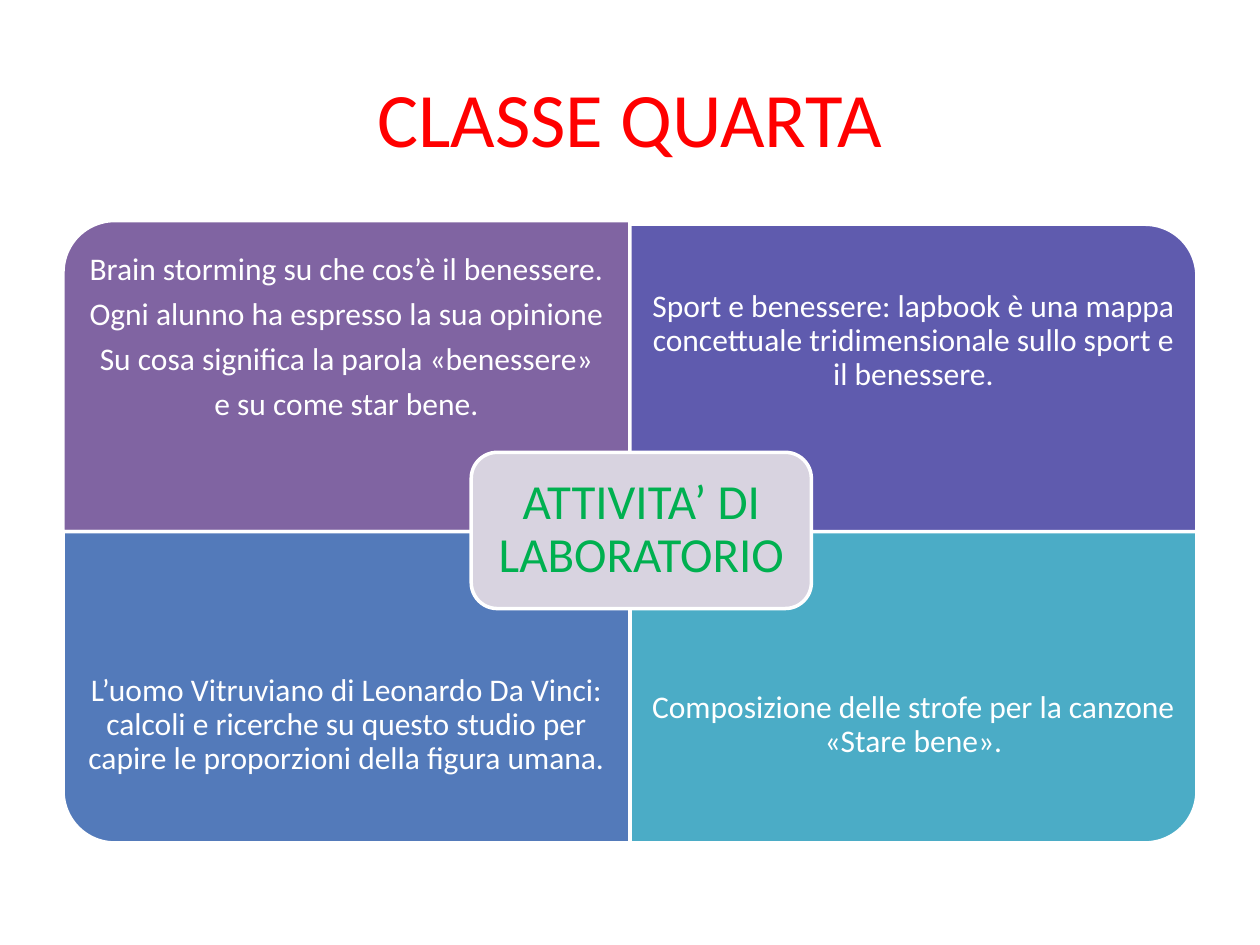
from dataclasses import dataclass

from pptx import Presentation
from pptx import util as u
from pptx.dml.color import RGBColor
from pptx.enum import shapes, text


@dataclass(frozen=True)
class Theme:
    font: str = "Calibri"
    title_size: int = 44
    body_size: int = 18
    label_size: int = 28
    title: str = "FF0000"
    white: str = "FFFFFF"
    label_text: str = "00B050"
    label_fill: str = "D8D3E0"
    purple: str = "8064A2"
    indigo: str = "5F5BAE"
    blue: str = "537ABA"
    teal: str = "4BACC6"


THEME = Theme()

# Matrix geometry in inches
TILE_WIDTH, TILE_HEIGHT = 4.5, 2.47
TEXT_HEIGHT = 1.86
LEFT, MIDDLE = 0.5, 5
BOTTOM_ROW = 4.22

# Left, top, rotation that turns the round corner outwards, colour, text
TILES = [
    (LEFT, 1.75, 270, THEME.purple, [
        "Brain storming su che cos’è il benessere.",
        "Ogni alunno ha espresso la sua opinione",
        "Su cosa significa la parola «benessere»",
        "e su come star bene.",
    ]),
    (MIDDLE, 1.78, 0, THEME.indigo, [
        "Sport e benessere: lapbook è una mappa concettuale "
        "tridimensionale sullo sport e il benessere.",
    ]),
    (LEFT, BOTTOM_ROW, 180, THEME.blue, [
        "L’uomo Vitruviano di Leonardo Da Vinci: calcoli e ricerche su "
        "questo studio per capire le proporzioni della figura umana.",
    ]),
    (MIDDLE, BOTTOM_ROW, 90, THEME.teal, [
        "Composizione delle strofe per la canzone «Stare bene».",
    ]),
]


def write_text(shape, lines, size, color, inset, line_spacing=0.9, space_after=0.35):
    """Fill a shape with centred paragraphs; space_after is a share of the size."""
    frame = shape.text_frame
    frame.word_wrap = True
    frame.vertical_anchor = text.MSO_ANCHOR.MIDDLE
    frame.margin_left = frame.margin_right = u.Inches(inset)
    frame.margin_top = frame.margin_bottom = u.Inches(inset)
    frame.text = "\n".join(lines)
    for paragraph in frame.paragraphs:
        paragraph.alignment = text.PP_ALIGN.CENTER
        paragraph.line_spacing = line_spacing
        paragraph.space_after = u.Pt(size * space_after)
        paragraph.font.name = THEME.font
        paragraph.font.size = u.Pt(size)
        paragraph.font.color.rgb = RGBColor.from_string(color)


def add_text_box(slide, left, top, width, height):
    return slide.shapes.add_textbox(
        u.Inches(left), u.Inches(top), u.Inches(width), u.Inches(height))


def add_panel(slide, kind, left, top, width, height, fill):
    """Add a filled shape with a white outline."""
    shape = slide.shapes.add_shape(
        kind, u.Inches(left), u.Inches(top), u.Inches(width), u.Inches(height))
    shape.shadow.inherit = False
    shape.fill.solid()
    shape.fill.fore_color.rgb = RGBColor.from_string(fill)
    shape.line.color.rgb = RGBColor.from_string(THEME.white)
    shape.line.width = u.Pt(2)
    return shape


def add_tile(slide, left, top, rotation, fill, lines):
    """Add a quarter of the matrix with upright text away from the centre."""
    # A quarter turn swaps the sides around the same centre
    width, height = TILE_WIDTH, TILE_HEIGHT
    if rotation in (90, 270):
        width, height = height, width
    tile = add_panel(
        slide, shapes.MSO_SHAPE.ROUND_1_RECTANGLE,
        left + (TILE_WIDTH - width) / 2, top + (TILE_HEIGHT - height) / 2,
        width, height, fill)
    tile.rotation = rotation

    text_top = top + TILE_HEIGHT - TEXT_HEIGHT if top == BOTTOM_ROW else top
    box = add_text_box(slide, left, text_top, TILE_WIDTH, TEXT_HEIGHT)
    write_text(box, lines, THEME.body_size, THEME.white, 0.14)


def main():
    presentation = Presentation()
    presentation.slide_width = u.Inches(10)
    presentation.slide_height = u.Inches(7.5)
    slide = presentation.slides.add_slide(presentation.slide_layouts[6])

    # Title
    title = add_text_box(slide, LEFT, 0.3, 9, 1.25)
    write_text(title, ["CLASSE QUARTA"], THEME.title_size, THEME.title, 0.1,
               line_spacing=1.0, space_after=0)

    # Four tiles
    for tile in TILES:
        add_tile(slide, *tile)

    # Central label
    label = add_panel(slide, shapes.MSO_SHAPE.ROUNDED_RECTANGLE,
                      3.74, 3.59, 2.7, 1.24, THEME.label_fill)
    write_text(label, ["ATTIVITA’ DI LABORATORIO"],
               THEME.label_size, THEME.label_text, 0.12)

    presentation.save("out.pptx")


if __name__ == "__main__":
    main()
